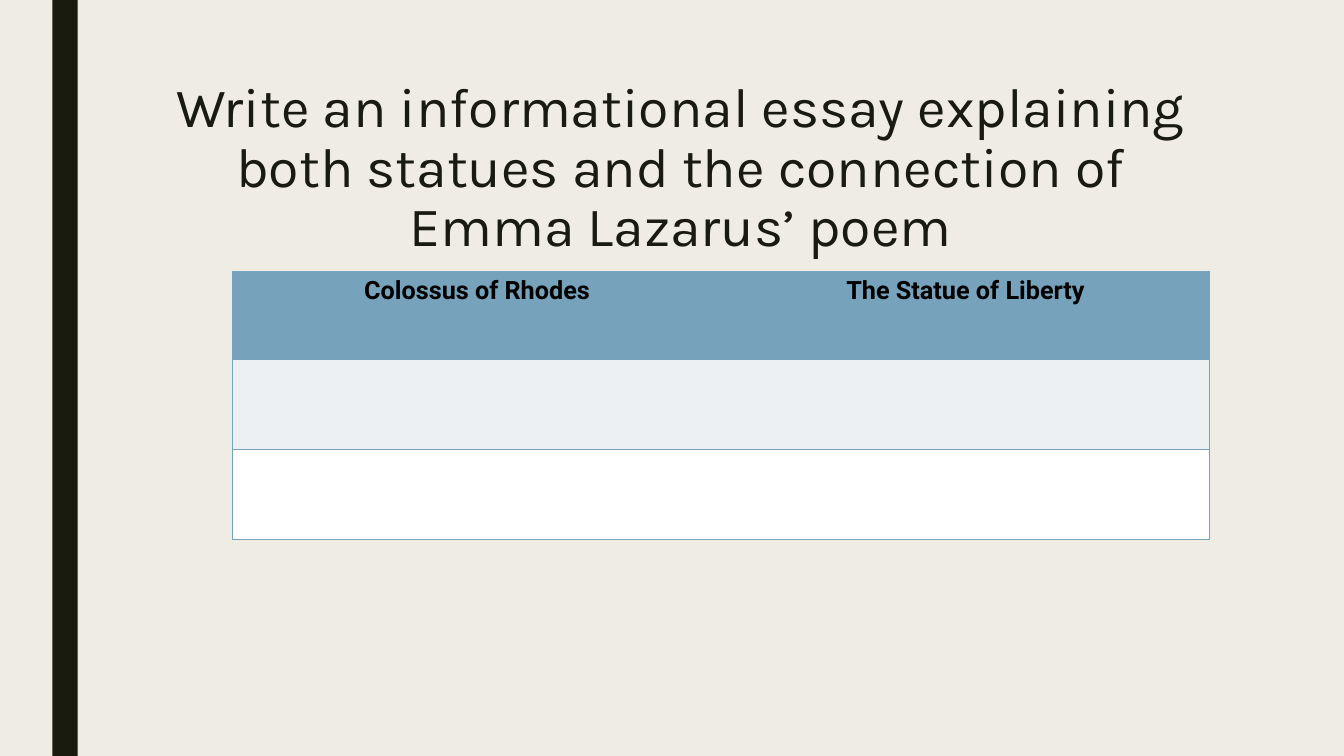
from lxml import etree
from pptx import Presentation
from pptx.dml.color import RGBColor
from pptx.enum import shapes, text
from pptx.oxml.ns import qn
from pptx.util import Inches, Pt

INK = "191B0E"
BLUE = "77A2BB"
PAPER = "EFEDE3"
NO_STYLE = "{2D5ABB26-0587-4C30-8999-92F81FD0307C}"


def paint(fill, color):
    fill.solid()
    fill.fore_color.rgb = RGBColor.from_string(color)


def format_text(tf, font, size, color, bold=False):
    for p in tf.paragraphs:
        p.alignment = text.PP_ALIGN.CENTER
        for r in p.runs:
            r.font.name = font
            r.font.size = Pt(size)
            r.font.bold = bold
            r.font.color.rgb = RGBColor.from_string(color)


def add_side_bar(s):
    sp = s.shapes.add_shape(shapes.MSO_SHAPE.RECTANGLE, Inches(0.52), 0, Inches(0.25), Inches(7.5))
    sp.shadow.inherit = False
    paint(sp.fill, INK)
    sp.line.fill.background()


def set_title(s, title):
    sp = s.shapes.title
    sp.left, sp.top, sp.width, sp.height = (Inches(v) for v in (1.5, 0.75, 10.5, 1.62))
    tf = sp.text_frame
    tf.text = title
    tf.word_wrap = True
    tf.auto_size = text.MSO_AUTO_SIZE.NONE
    tf.vertical_anchor = text.MSO_ANCHOR.TOP
    tf.paragraphs[0].line_spacing = 0.89
    format_text(tf, "Karla", 39.6, INK)


def set_borders(cell, sides):
    tc_pr = cell._tc.get_or_add_tcPr()
    for i, side in enumerate(sides):
        ln = etree.Element(qn(f"a:ln{side}"), w=str(Pt(1)))
        fill = etree.SubElement(ln, qn("a:solidFill"))
        etree.SubElement(fill, qn("a:srgbClr"), val=BLUE)
        tc_pr.insert(i, ln)


def add_comparison(s, headings, heights, fills):
    frame = s.shapes.add_table(
        len(heights), len(headings), Inches(2.31), Inches(2.69), Inches(9.69), Inches(sum(heights)))
    table = frame.table
    table.first_row = table.horz_banding = False
    next(frame._element.iter(qn("a:tableStyleId"))).text = NO_STYLE
    for row, height, color in zip(table.rows, heights, fills):
        row.height = Inches(height)
        for cell, outer_side in zip(row.cells, "LR"):
            paint(cell.fill, color)
            set_borders(cell, outer_side + "TB")
    for cell, heading in zip(table.rows[0].cells, headings):
        cell.text_frame.text = heading
        format_text(cell.text_frame, "Roboto", 18, "000000", True)


def main():
    prs = Presentation()
    prs.slide_width, prs.slide_height = Inches(13.33), Inches(7.5)
    s = prs.slides.add_slide(prs.slide_layouts[5])
    paint(s.background.fill, PAPER)
    add_side_bar(s)
    set_title(s, "Write an informational essay explaining both statues and the connection of Emma Lazarus’ poem")
    add_comparison(
        s, ["Colossus of Rhodes", "The Statue of Liberty"],
        [0.88, 0.89, 0.89], [BLUE, "ECF0F3", "FFFFFF"])
    prs.save("out.pptx")


if __name__ == "__main__":
    main()
